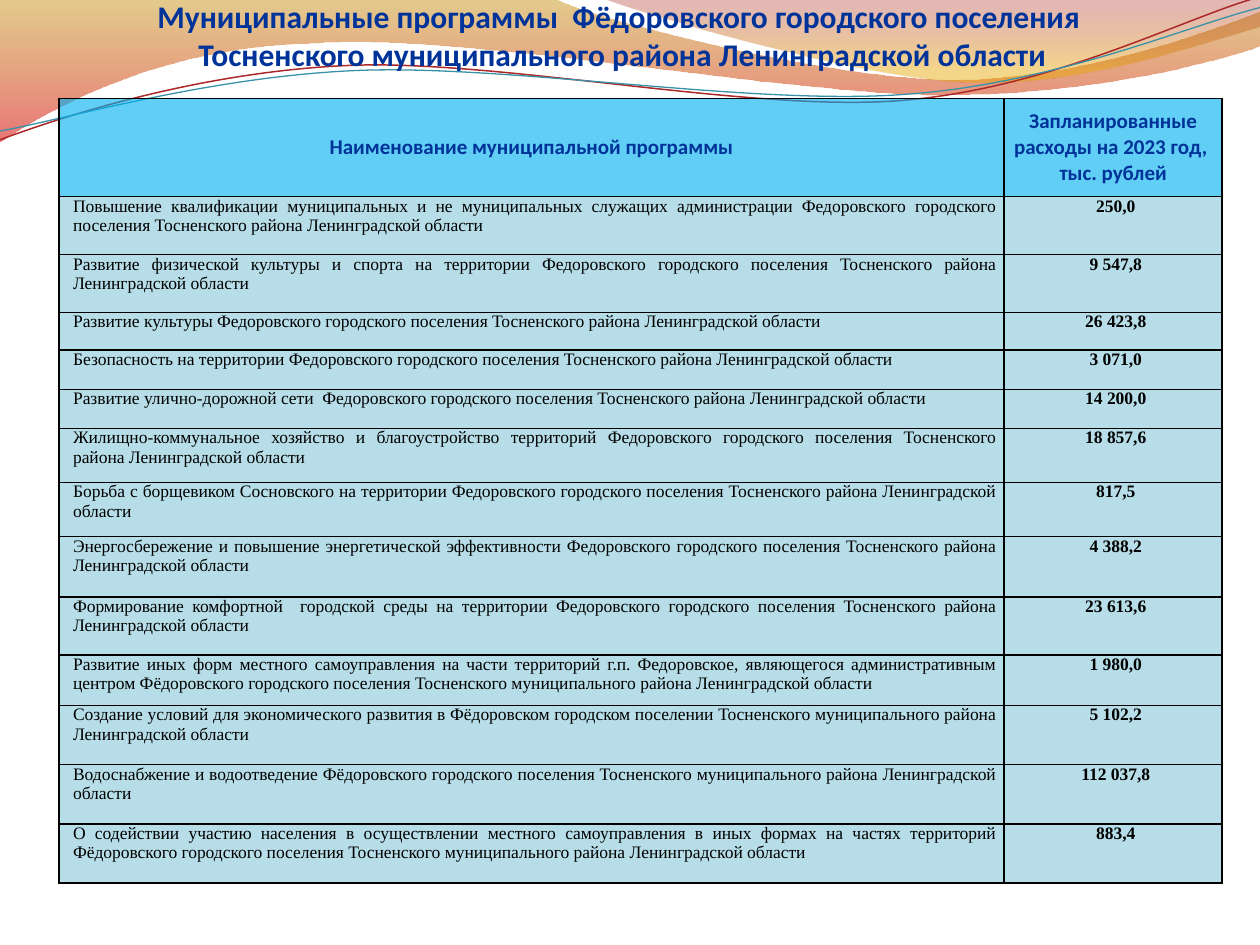
import pptx
import pptx.util
import pptx.dml.color
import pptx.enum.text
import pptx.oxml
import pptx.oxml.ns
from lxml import etree

Inches, Pt = pptx.util.Inches, pptx.util.Pt
RGBColor = pptx.dml.color.RGBColor
ALIGN, ANCHOR = pptx.enum.text.PP_ALIGN, pptx.enum.text.MSO_ANCHOR
qn = pptx.oxml.ns.qn

NAVY = RGBColor(0x00, 0x33, 0x99)
BLACK = RGBColor(0x00, 0x00, 0x00)
HEADER_BLUE = RGBColor(0x00, 0xB0, 0xF0)
ROW_BLUE = RGBColor(0xB7, 0xDE, 0xE8)
GOLD = RGBColor(0xC3, 0x8B, 0x00)
RED = RGBColor(0xD6, 0x03, 0x05)
DARK_RED = RGBColor(0xA1, 0x11, 0x12)
AMBER = RGBColor(0xE9, 0xA6, 0x00)
LINE_RED = RGBColor(0xAC, 0x28, 0x29)
LINE_TEAL = RGBColor(0x38, 0x91, 0xA7)

# Outlines in inches: a start point, then segments of 1 point (line) or 3 (curve)
LEFT_WAVE = [(0, 0), [(4.4, -0.01)],
             [(4.76, 0.17), (6.64, 0.63), (7.58, 0.63)],
             [(8.53, 0.63), (9.58, 0.26), (10, 0.09)], [(10.01, 0.36)],
             [(9.83, 0.44), (8.7, 0.76), (7.46, 0.75)],
             [(6.22, 0.75), (3.82, 0.28), (2.57, 0.34)],
             [(1.29, 0.36), (0.46, 0.83), (-0.01, 1.13)]]
RIGHT_WAVE = [(4.79, -0.01), [(5.09, 0.11), (6.82, 0.62), (7.69, 0.65)],
              [(8.56, 0.69), (9.61, 0.32), (10, 0.21)], [(10, 0)]]
RED_CURVE = [(0, 1.11), [(0.48, 0.93), (1.58, 0.57), (2.77, 0.52)],
             [(3.95, 0.47), (5.93, 0.89), (7.13, 0.8)],
             [(8.33, 0.71), (9.38, 0.15), (9.98, -0.02)]]
TEAL_CURVE = [(0, 1.04), [(0.47, 0.96), (1.64, 0.61), (2.83, 0.56)],
              [(4.03, 0.51), (5.97, 0.84), (7.17, 0.75)],
              [(8.36, 0.67), (9.41, 0.21), (10, 0.06)]]

TITLE = ["Муниципальные программы  Фёдоровского городского поселения ",
         "Тосненского муниципального района Ленинградской области"]
HEADERS = [["Наименование муниципальной программы"],
           ["Запланированные", "расходы на 2023 год,  тыс. рублей"]]
HEADER_HEIGHT = 0.78
COLUMN_WIDTHS = [7.5, 1.73]
# Programme, planned spending, row height
PROGRAMMES = [
    ("Повышение квалификации муниципальных и не муниципальных служащих администрации Федоровского городского поселения Тосненского района Ленинградской области", "250,0", 0.46),
    ("Развитие физической культуры и спорта на территории Федоровского городского поселения Тосненского района Ленинградской области", "9 547,8", 0.46),
    ("Развитие культуры Федоровского городского поселения Тосненского района Ленинградской области", "26 423,8", 0.3),
    ("Безопасность на территории Федоровского городского поселения Тосненского района Ленинградской области", "3 071,0", 0.31),
    ("Развитие улично-дорожной сети  Федоровского городского поселения Тосненского района Ленинградской области", "14 200,0", 0.31),
    ("Жилищно-коммунальное хозяйство и благоустройство территорий Федоровского городского поселения Тосненского района Ленинградской области", "18 857,6", 0.43),
    ("Борьба с борщевиком Сосновского на территории Федоровского городского поселения Тосненского района Ленинградской области", "817,5", 0.43),
    ("Энергосбережение и повышение энергетической эффективности Федоровского городского поселения Тосненского района Ленинградской области", "4 388,2", 0.48),
    ("Формирование комфортной  городской среды на территории Федоровского городского поселения Тосненского района Ленинградской области", "23 613,6", 0.46),
    ("Развитие иных форм местного самоуправления на части территорий г.п. Федоровское, являющегося административным центром Фёдоровского городского поселения Тосненского муниципального района Ленинградской области", "1 980,0", 0.4),
    ("Создание условий для экономического развития в Фёдоровском городском поселении Тосненского муниципального района Ленинградской области", "5 102,2", 0.47),
    ("Водоснабжение и водоотведение Фёдоровского городского поселения Тосненского муниципального района Ленинградской области", "112 037,8", 0.47),
    ("О содействии участию населения в осуществлении местного самоуправления в иных формах на частях территорий Фёдоровского городского поселения Тосненского муниципального района Ленинградской области", "883,4", 0.47),
]


def set_alpha(color_element, percent):
    etree.SubElement(color_element, qn("a:alpha")).set("val", str(percent * 1000))


def add_outline(slide, start, *segments, closed):
    builder = slide.shapes.build_freeform(Inches(start[0]), Inches(start[1]))
    points = [point for segment in segments for point in segment]
    builder.add_line_segments([(Inches(x), Inches(y)) for x, y in points], close=closed)
    shape = builder.convert_to_shape()
    shape.shadow.inherit = False
    # Merge each three-point segment into one Bezier curve
    steps = iter(list(shape._element.iter(qn("a:lnTo"))))
    for segment in segments:
        first, *others = [next(steps) for _ in segment]
        if others:
            first.tag = qn("a:cubicBezTo")
            for step in others:
                first.append(step[0])
                step.getparent().remove(step)
    return shape


def add_wave(slide, outline, stops):
    wave = add_outline(slide, *outline, closed=True)
    wave.line.fill.background()
    wave.fill.gradient()
    wave.fill.gradient_angle = 270
    for stop, (position, color, opacity) in zip(wave.fill.gradient_stops, stops):
        stop.position = position
        stop.color.rgb = color
    for element, (_, _, opacity) in zip(wave._element.spPr.iter(qn("a:srgbClr")), stops):
        set_alpha(element, opacity)


def add_curve(slide, outline, color, width):
    curve = add_outline(slide, *outline, closed=False)
    curve.fill.background()
    curve.line.color.rgb = color
    curve.line.width = Pt(width)


def write_text(frame, lines, font, size, color, bold, align, indent=0):
    for index, line in enumerate(lines):
        paragraph = frame.add_paragraph() if index else frame.paragraphs[0]
        paragraph.alignment = align
        if indent:
            properties = paragraph._p.get_or_add_pPr()
            properties.set("marL", str(Inches(indent)))
            properties.set("indent", "0")
        run = paragraph.add_run()
        run.text = line
        run.font.name, run.font.size, run.font.bold = font, Pt(size), bold
        run.font.color.rgb = color


def style_cell(cell, fill, side_margin, anchor, opacity=100):
    cell.margin_left = cell.margin_right = Inches(side_margin)
    cell.margin_top = cell.margin_bottom = 0
    cell.vertical_anchor = anchor
    properties = cell._tc.get_or_add_tcPr()
    for side in ("lnL", "lnR", "lnT", "lnB"):
        border = etree.SubElement(properties, qn("a:" + side), w=str(Pt(1)))
        solid = etree.SubElement(border, qn("a:solidFill"))
        etree.SubElement(solid, qn("a:srgbClr"), val=str(BLACK))
    cell.fill.solid()
    cell.fill.fore_color.rgb = fill
    if opacity < 100:
        set_alpha(properties.find(qn("a:solidFill"))[0], opacity)


def add_programme_table(slide):
    heights = [HEADER_HEIGHT] + [height for _, _, height in PROGRAMMES]
    table = slide.shapes.add_table(
        len(heights), len(COLUMN_WIDTHS), Inches(0.47), Inches(0.78),
        Inches(sum(COLUMN_WIDTHS)), Inches(sum(heights))).table
    for column, width in zip(table.columns, COLUMN_WIDTHS):
        column.width = Inches(width)
    for row, height in zip(table.rows, heights):
        row.height = Inches(height)

    for column, lines in enumerate(HEADERS):
        cell = table.cell(0, column)
        style_cell(cell, HEADER_BLUE, 0, ANCHOR.MIDDLE, opacity=62)
        write_text(cell.text_frame, lines, "Calibri", 12, NAVY, True, ALIGN.CENTER)

    for row, (programme, spending, _) in enumerate(PROGRAMMES, start=1):
        for column, (text, bold, align) in enumerate(
                [(programme, False, ALIGN.JUSTIFY), (spending, True, ALIGN.CENTER)]):
            cell = table.cell(row, column)
            style_cell(cell, ROW_BLUE, 0.07, ANCHOR.TOP)
            write_text(cell.text_frame, [text], "Times New Roman", 10, BLACK,
                       bold, align, indent=0.04)


def add_title(slide):
    frame = slide.shapes.add_textbox(0, Inches(-0.02), Inches(9.88), Inches(0.76)).text_frame
    frame.word_wrap = True
    frame.margin_top = frame.margin_bottom = 0
    frame.vertical_anchor = ANCHOR.TOP
    write_text(frame, TITLE, "Calibri", 18, NAVY, True, ALIGN.CENTER)


def main():
    presentation = pptx.Presentation()
    presentation.slide_width, presentation.slide_height = Inches(10), Inches(7.5)
    slide = presentation.slides.add_slide(presentation.slide_layouts[6])

    # Decorative waves along the top
    add_wave(slide, LEFT_WAVE, [(0, GOLD, 45), (1, RED, 55)])
    add_wave(slide, RIGHT_WAVE, [(0, DARK_RED, 30), (0.8, AMBER, 45)])
    add_curve(slide, RED_CURVE, LINE_RED, 0.85)
    add_curve(slide, TEAL_CURVE, LINE_TEAL, 0.75)

    # Content
    add_programme_table(slide)
    add_title(slide)
    presentation.save("out.pptx")


if __name__ == "__main__":
    main()
